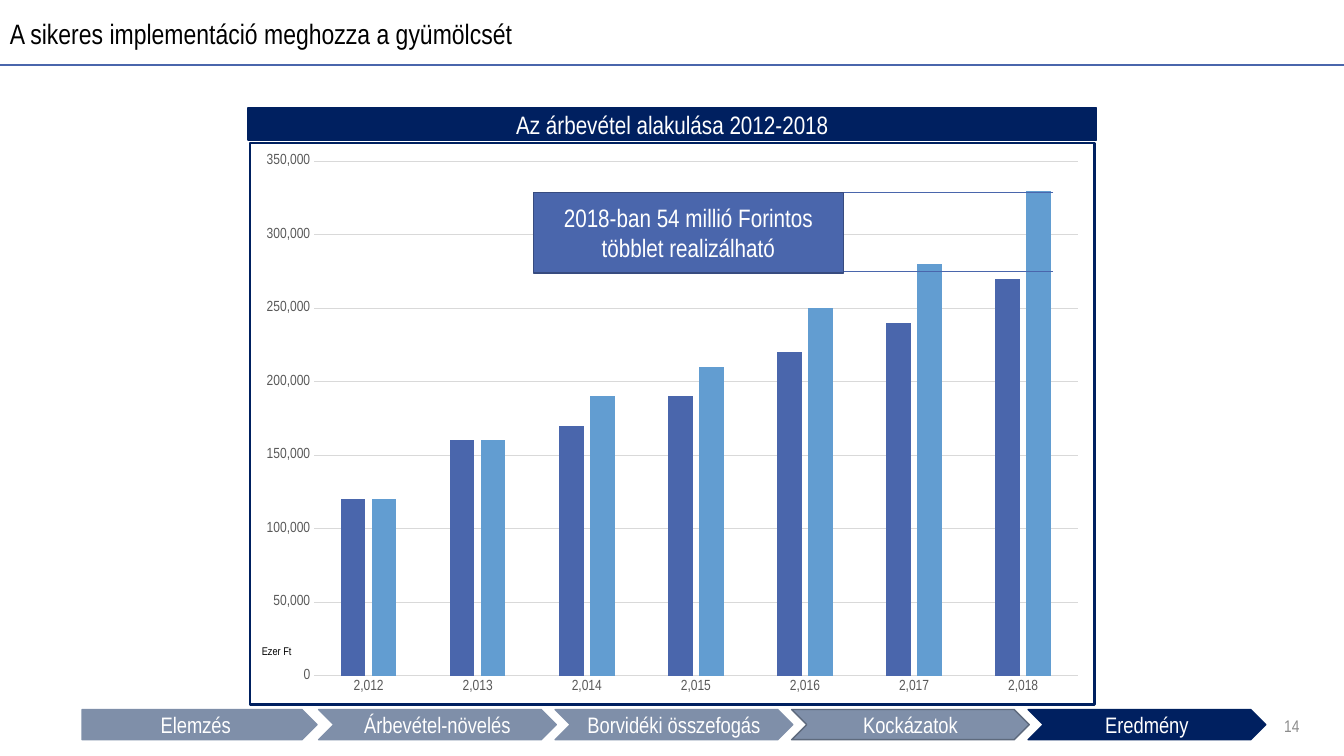
from dataclasses import dataclass
from typing import Optional

from pptx import Presentation
from pptx.chart.data import CategoryChartData
from pptx.dml.color import RGBColor
from pptx.enum.chart import XL_CHART_TYPE, XL_TICK_MARK
from pptx.enum.shapes import MSO_CONNECTOR, MSO_SHAPE
from pptx.enum.text import MSO_ANCHOR, PP_ALIGN
from pptx.oxml import parse_xml
from pptx.oxml.ns import nsdecls, qn
from pptx.util import Cm, Pt

FONT = "Arial Narrow"
BLACK = RGBColor(0x00, 0x00, 0x00)
WHITE = RGBColor(0xFF, 0xFF, 0xFF)
NAVY = RGBColor(0x00, 0x20, 0x60)
BLUE = RGBColor(0x4A, 0x66, 0xAC)
DARK_BLUE = RGBColor(0x37, 0x4B, 0x7F)
LIGHT_BLUE = RGBColor(0x62, 0x9D, 0xD1)
SLATE = RGBColor(0x7F, 0x8F, 0xA9)
DARK_SLATE = RGBColor(0x5E, 0x6A, 0x7D)
GRID_GREY = RGBColor(0xD9, 0xD9, 0xD9)
LABEL_GREY = RGBColor(0x59, 0x59, 0x59)
NUMBER_GREY = RGBColor(0x8C, 0x8C, 0x8C)


@dataclass
class Block:
    """A piece of text in a box, measured in centimetres."""
    text: str
    left: float
    top: float
    width: float
    height: float
    size: float
    color: RGBColor = WHITE
    align: PP_ALIGN = PP_ALIGN.CENTER
    anchor: MSO_ANCHOR = MSO_ANCHOR.MIDDLE
    preset: Optional[MSO_SHAPE] = None
    fill: RGBColor = NAVY
    line: RGBColor = NAVY


@dataclass
class Step:
    label: str
    fill: RGBColor = SLATE
    line: RGBColor = SLATE


STEPS = [
    Step("Elemzés"),
    Step("Árbevétel-növelés"),
    Step("Borvidéki összefogás"),
    Step("Kockázatok", line=DARK_SLATE),
    Step("Eredmény", NAVY, NAVY),
]
STEP_LEFT, STEP_TOP, STEP_PITCH = 2.07, 17.88, 5.96

YEARS = range(2012, 2019)
REVENUE = [
    ("Series 1", BLUE, (120000, 160000, 170000, 190000, 220000, 240000, 270000)),
    ("Series 2", LIGHT_BLUE, (120000, 160000, 190000, 210000, 250000, 280000, 330000)),
]


def add_block(slide, block: Block) -> None:
    area = [Cm(v) for v in (block.left, block.top, block.width, block.height)]
    if block.preset is None:
        box = slide.shapes.add_textbox(*area)
    else:
        box = slide.shapes.add_shape(block.preset, *area)
        box.shadow.inherit = False
        box.fill.solid()
        box.fill.fore_color.rgb = block.fill
        box.line.color.rgb = block.line
        box.line.width = Pt(1)
    frame = box.text_frame
    frame.text = block.text
    frame.word_wrap = True
    frame.vertical_anchor = block.anchor
    paragraph = frame.paragraphs[0]
    paragraph.alignment = block.align
    font = paragraph.runs[0].font
    font.name, font.size, font.color.rgb = FONT, Pt(block.size), block.color


def add_rule(slide, start: float, end: float, y: float, weight: float) -> None:
    rule = slide.shapes.add_connector(
        MSO_CONNECTOR.STRAIGHT, Cm(start), Cm(y), Cm(end), Cm(y))
    rule.line.color.rgb = BLUE
    rule.line.width = Pt(weight)
    rule._element.spPr.append(parse_xml(f"<a:effectLst {nsdecls('a')}/>"))


def style_axis(axis) -> None:
    axis.major_tick_mark = axis.minor_tick_mark = XL_TICK_MARK.NONE
    axis.tick_labels.number_format = "#,##0"
    axis.tick_labels.number_format_is_linked = False
    font = axis.tick_labels.font
    font.name, font.size, font.color.rgb = FONT, Pt(10.5), LABEL_GREY


def add_revenue_chart(slide) -> None:
    data = CategoryChartData(number_format="#,##0")
    data.categories = YEARS
    data.categories.number_format = "#,##0"
    for name, _, values in REVENUE:
        data.add_series(name, values)
    chart = slide.shapes.add_chart(
        XL_CHART_TYPE.COLUMN_CLUSTERED,
        Cm(6.27), Cm(3.58), Cm(21.34), Cm(14.2), data).chart
    chart.has_legend = False
    chart.has_title = False
    chart.font.name, chart.font.size, chart.font.color.rgb = FONT, Pt(10), BLACK

    plot = chart.plots[0]
    plot.gap_width, plot.overlap, plot.vary_by_categories = 219, -27, False
    for series, (_, color, _) in zip(plot.series, REVENUE):
        series.format.fill.solid()
        series.format.fill.fore_color.rgb = color

    years, amounts = chart.category_axis, chart.value_axis
    style_axis(years)
    style_axis(amounts)
    years.format.line.color.rgb = GRID_GREY
    years.format.line.width = Pt(0.75)
    amounts.format.line.fill.background()
    amounts.minimum_scale, amounts.maximum_scale = 0, 350000
    amounts.major_unit = 50000
    amounts.has_major_gridlines = True
    grid = amounts.major_gridlines.format.line
    grid.color.rgb, grid.width = GRID_GREY, Pt(0.75)

    # Frame around the chart
    chart._chartSpace.find(qn("c:chart")).addnext(parse_xml(
        f'<c:spPr {nsdecls("c", "a")}><a:noFill/><a:ln w="{Pt(1.5)}"><a:solidFill>'
        f'<a:srgbClr val="{NAVY}"/></a:solidFill></a:ln></c:spPr>'))


def main() -> None:
    deck = Presentation()
    deck.slide_width, deck.slide_height = Cm(33.87), Cm(19.05)
    slide = deck.slides.add_slide(deck.slide_layouts[6])

    # Heading and page number
    add_rule(slide, 0, 33.87, 1.63, 1.5)
    add_block(slide, Block("A sikeres implementáció meghozza a gyümölcsét",
                           0, 0, 25.02, 1.7, 20, BLACK, PP_ALIGN.LEFT))
    add_block(slide, Block("14", 31.93, 17.78, 1.07, 1.02, 12, NUMBER_GREY,
                           PP_ALIGN.RIGHT))

    # Revenue chart with its callout
    add_revenue_chart(slide)
    for level in (4.85, 6.83):
        add_rule(slide, 26.54, 20.27, level, 0.5)
    add_block(slide, Block("2018-ban 54 millió Forintos többlet realizálható",
                           13.44, 4.85, 7.82, 2.03, 18, preset=MSO_SHAPE.RECTANGLE,
                           fill=BLUE, line=DARK_BLUE))
    add_block(slide, Block("Az árbevétel alakulása 2012-2018",
                           6.25, 2.72, 21.39, 0.81, 18, preset=MSO_SHAPE.RECTANGLE))
    add_block(slide, Block("Ezer Ft", 6.35, 16.1, 1.57, 0.53, 8, BLACK,
                           PP_ALIGN.LEFT, MSO_ANCHOR.TOP))

    # Process steps
    for i, step in enumerate(STEPS):
        preset = MSO_SHAPE.CHEVRON if i else MSO_SHAPE.PENTAGON
        add_block(slide, Block(step.label, STEP_LEFT + i * STEP_PITCH, STEP_TOP,
                               5.99 if i else 5.92, 0.76, 16, preset=preset,
                               fill=step.fill, line=step.line))

    deck.save("out.pptx")


if __name__ == "__main__":
    main()
